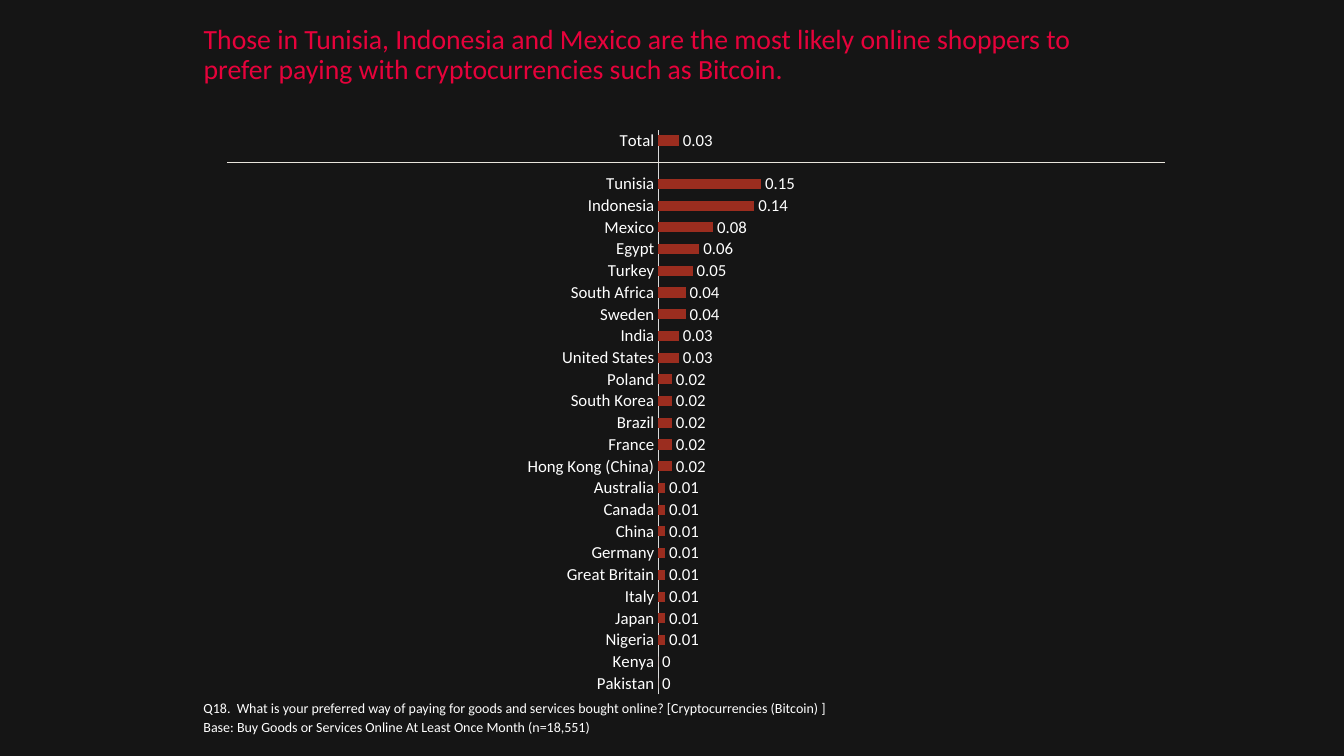
import pptx
import pptx.chart.data
import pptx.dml.color
import pptx.enum.chart
import pptx.enum.shapes
import pptx.enum.text
import pptx.oxml
import pptx.oxml.ns
import pptx.util

COLORS = {
    "background": "151515",
    "title": "E6023B",
    "text": "FFFFFF",
    "bar": "9B2D1F",
    "axis": "D9D9D9",
    "divider": "E9E5DC",
}
FONT = "Calibri"
SLIDE_SIZE = (13.33, 7.5)
TITLE_BOX = (1.92, 0.25, 9.46, 0.61)
CHART_BOX = (5, 1.08, 8.4, 5.91)
DIVIDER_BOX = (2.25, 1.61, 9.3, 0)
FOOTNOTE_BOX = (1.92, 6.9, 7.94, 0.45)
PLOT_SHARES = {"x": 0.182, "y": 0.035, "w": 0.81, "h": 0.948}

TITLE = (
    "Those in Tunisia, Indonesia and Mexico are the most likely online shoppers "
    "to prefer paying with cryptocurrencies such as Bitcoin."
)
FOOTNOTES = [
    "Q18.  What is your preferred way of paying for goods and services bought online? "
    "[Cryptocurrencies (Bitcoin) ]",
    "Base: Buy Goods or Services Online At Least Once Month (n=18,551)",
]
PREFERENCES = [
    ("Total", 0.03), ("", None), ("Tunisia", 0.15), ("Indonesia", 0.14),
    ("Mexico", 0.08), ("Egypt", 0.06), ("Turkey", 0.05), ("South Africa", 0.04),
    ("Sweden", 0.04), ("India", 0.03), ("United States", 0.03), ("Poland", 0.02),
    ("South Korea", 0.02), ("Brazil", 0.02), ("France", 0.02),
    ("Hong Kong (China)", 0.02), ("Australia", 0.01), ("Canada", 0.01),
    ("China", 0.01), ("Germany", 0.01), ("Great Britain", 0.01), ("Italy", 0.01),
    ("Japan", 0.01), ("Nigeria", 0.01), ("Kenya", 0), ("Pakistan", 0),
]


def rgb(name):
    """Return the named palette colour."""
    return pptx.dml.color.RGBColor.from_string(COLORS[name])


def inches(box):
    """Convert a box in inches to lengths."""
    return [pptx.util.Inches(value) for value in box]


def style_font(font, size, color):
    """Set typeface, size and colour of a font."""
    font.name = FONT
    font.size = pptx.util.Pt(size)
    font.color.rgb = rgb(color)


def add_line_of_text(paragraph, text, size, color, spacing):
    """Fill a left-aligned paragraph with one styled run."""
    paragraph.alignment = pptx.enum.text.PP_ALIGN.LEFT
    paragraph.line_spacing = spacing
    run = paragraph.add_run()
    run.text = text
    style_font(run.font, size, color)


def place_title(slide, box):
    """Move the title placeholder into its box and write the headline."""
    title = slide.shapes.title
    title.left, title.top, title.width, title.height = inches(box)
    frame = title.text_frame
    frame.word_wrap = True
    frame.auto_size = pptx.enum.text.MSO_AUTO_SIZE.NONE
    frame.vertical_anchor = pptx.enum.text.MSO_ANCHOR.MIDDLE
    add_line_of_text(frame.paragraphs[0], TITLE, 19.8, "title", 0.9)


def set_plot_layout(chart, shares):
    """Fix the inner plot area at shares of the chart's size."""
    plot_area = chart.element.find(".//" + pptx.oxml.ns.qn("c:plotArea"))
    for automatic in plot_area.findall(pptx.oxml.ns.qn("c:layout")):
        plot_area.remove(automatic)
    modes = "".join(f'<c:{side}Mode val="edge"/>' for side in "xy")
    sizes = "".join(f'<c:{side} val="{share}"/>' for side, share in shares.items())
    plot_area.insert(0, pptx.oxml.parse_xml(
        f'<c:layout {pptx.oxml.ns.nsdecls("c")}><c:manualLayout>'
        f'<c:layoutTarget val="inner"/>{modes}{sizes}</c:manualLayout></c:layout>'
    ))


def add_preference_chart(slide, box):
    """Draw the bars of cryptocurrency preference by country."""
    preferences = pptx.chart.data.CategoryChartData()
    preferences.categories = [country for country, _ in PREFERENCES]
    preferences.add_series("Series 1", [share for _, share in PREFERENCES])
    chart = slide.shapes.add_chart(
        pptx.enum.chart.XL_CHART_TYPE.BAR_CLUSTERED, *inches(box), preferences
    ).chart
    chart.has_legend = False
    chart.has_title = False
    style_font(chart.font, 10, "text")
    set_plot_layout(chart, PLOT_SHARES)

    countries = chart.category_axis
    countries.reverse_order = True
    countries.has_major_gridlines = False
    countries.major_tick_mark = pptx.enum.chart.XL_TICK_MARK.NONE
    countries.format.line.color.rgb = rgb("axis")
    countries.format.line.width = pptx.util.Pt(0.75)
    style_font(countries.tick_labels.font, 12, "text")

    shares = chart.value_axis
    shares.minimum_scale = 0
    shares.maximum_scale = 1
    shares.has_major_gridlines = False
    shares.visible = False

    bars = chart.plots[0]
    bars.gap_width = 115
    bars.vary_by_categories = False
    fill = bars.series[0].format.fill
    fill.solid()
    fill.fore_color.rgb = rgb("bar")
    bars.has_data_labels = True
    labels = bars.data_labels
    labels.show_value = True
    labels.position = pptx.enum.chart.XL_LABEL_POSITION.OUTSIDE_END
    style_font(labels.font, 12, "text")


def add_divider(slide, box):
    """Rule a line between the total and the countries."""
    left, top, width, height = inches(box)
    divider = slide.shapes.add_connector(
        pptx.enum.shapes.MSO_CONNECTOR.STRAIGHT, left, top, left + width, top + height
    )
    divider.line.color.rgb = rgb("divider")
    divider.line.width = pptx.util.Pt(1)
    divider.element.spPr.append(
        pptx.oxml.parse_xml(f'<a:effectLst {pptx.oxml.ns.nsdecls("a")}/>')
    )


def add_footnotes(slide, box):
    """Write the survey question and base at the foot of the slide."""
    frame = slide.shapes.add_textbox(*inches(box)).text_frame
    frame.word_wrap = True
    frame.vertical_anchor = pptx.enum.text.MSO_ANCHOR.BOTTOM
    for index, footnote in enumerate(FOOTNOTES):
        paragraph = frame.add_paragraph() if index else frame.paragraphs[0]
        paragraph.space_before = pptx.util.Pt(2)
        add_line_of_text(paragraph, footnote, 10, "text", 0.95)


def main():
    """Build and save the slide."""
    presentation = pptx.Presentation()
    presentation.slide_width, presentation.slide_height = inches(SLIDE_SIZE)
    slide = presentation.slides.add_slide(presentation.slide_layouts[5])
    slide.background.fill.solid()
    slide.background.fill.fore_color.rgb = rgb("background")
    add_footnotes(slide, FOOTNOTE_BOX)
    place_title(slide, TITLE_BOX)
    add_preference_chart(slide, CHART_BOX)
    add_divider(slide, DIVIDER_BOX)
    presentation.save("out.pptx")


if __name__ == "__main__":
    main()
